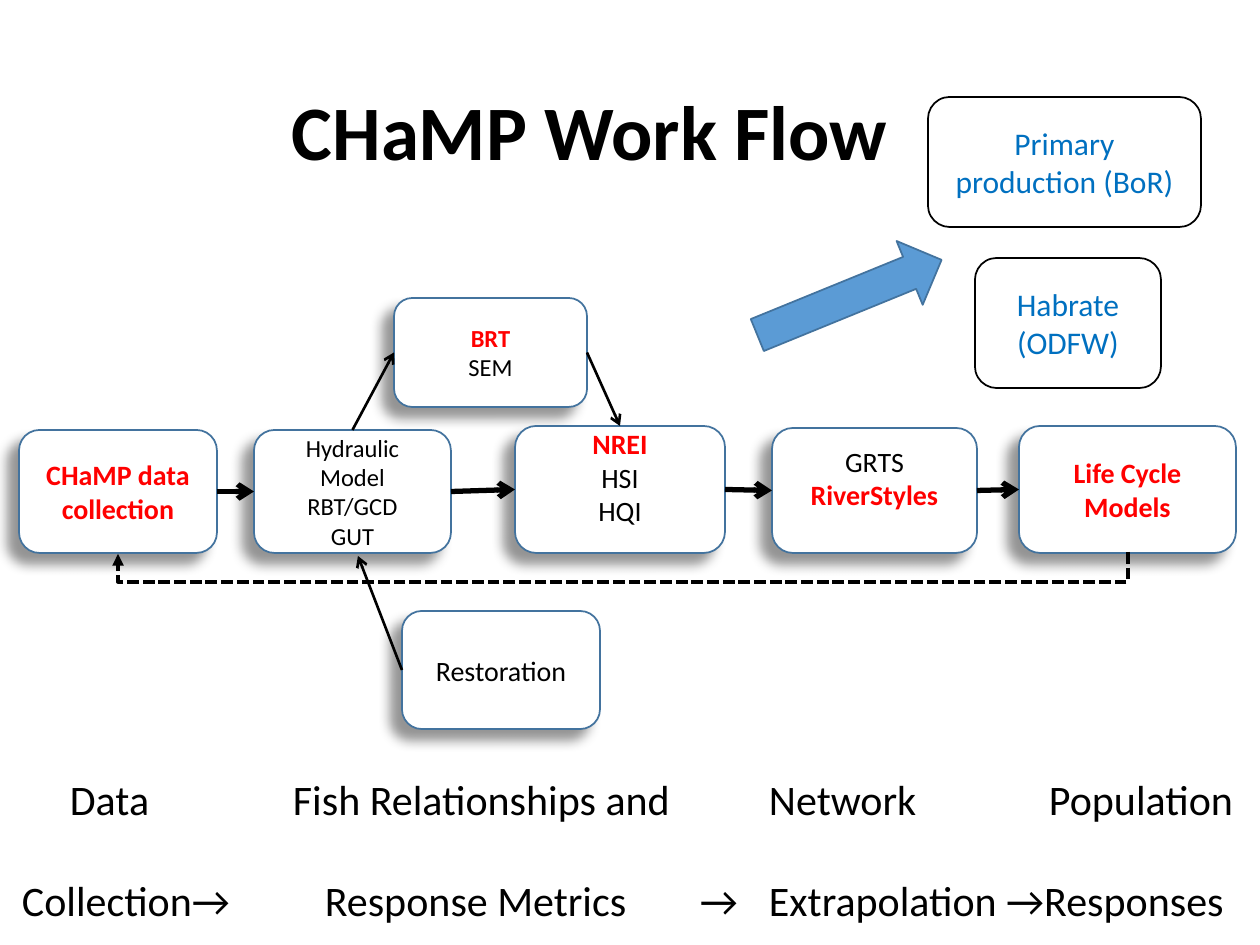
from lxml import etree
from pptx import Presentation
from pptx.dml.color import RGBColor
from pptx.enum.dml import MSO_LINE
from pptx.enum.shapes import MSO_CONNECTOR as CONNECTOR, MSO_SHAPE as SHAPE
from pptx.enum.text import MSO_ANCHOR as ANCHOR, PP_ALIGN as ALIGN
from pptx.oxml import parse_xml
from pptx.oxml.ns import nsdecls, qn
from pptx.util import Pt

PX = 914400 / 126
TOP, LEFT, BOTTOM, RIGHT = 0, 1, 2, 3
BLACK, RED, BLUE, EDGE = "000000", "FF0000", "0070C0", "43739E"


def px(*lengths):
    return [round(length * PX) for length in lengths]


def color(hex_code):
    return RGBColor.from_string(hex_code)


prs = Presentation()
prs.slide_width, prs.slide_height = px(1260, 945)
slide = prs.slides.add_slide(prs.slide_layouts[5])
shapes = slide.shapes

# Title
title = shapes.title
title.left, title.top, title.width, title.height = px(47, 0, 1086, 183)
title.text_frame.text = "CHaMP Work Flow"
title.text_frame.vertical_anchor = ANCHOR.BOTTOM
heading = title.text_frame.paragraphs[0]
heading.alignment = ALIGN.CENTER
heading.line_spacing = 0.9
heading.font.name, heading.font.size, heading.font.bold = "Calibri", Pt(44), True
heading.font.color.rgb = color(BLACK)

# Boxes: place, edge, size, extra bottom inset, lines of (text, colour)
steps = {
    "collection": ((19, 430, 198, 123), EDGE, 16, 0, [("CHaMP data collection", RED)]),
    "brt": ((394, 298, 193, 109), EDGE, 14, 0, [("BRT", RED), ("SEM", BLACK)]),
    "nrei": ((515, 426, 210, 127), EDGE, 16, 25,
             [("NREI", RED), ("HSI", BLACK), ("HQI", BLACK)]),
    "life_cycle": ((1019, 426, 217, 127), EDGE, 16, 0, [("Life Cycle Models", RED)]),
    "hydraulic": ((254, 430, 197, 123), EDGE, 14, 0,
                  [("Hydraulic Model", BLACK), ("RBT/GCD", BLACK), ("GUT", BLACK)]),
    "grts": ((772, 428, 205, 125), EDGE, 16, 25,
             [("GRTS", BLACK), ("RiverStyles", RED)]),
    "primary": ((928, 97, 273, 130), BLACK, 18, 0, [("Primary production (BoR)", BLUE)]),
    "habrate": ((975, 258, 186, 130), BLACK, 18, 0, [("Habrate (ODFW)", BLUE)]),
    "restoration": ((402, 611, 198, 118), EDGE, 16, 0, [("Restoration", BLACK)]),
}
boxes = {}
for step, (place, edge, size, lift, lines) in steps.items():
    box = boxes[step] = shapes.add_shape(SHAPE.ROUNDED_RECTANGLE, *px(*place))
    box.shadow.inherit = False
    box.fill.solid()
    box.fill.fore_color.rgb = color("FFFFFF")
    box.line.color.rgb = color(edge)
    box.line.width = Pt(1)
    if edge == EDGE:
        effects = box._element.spPr.find(qn("a:effectLst"))
        effects.append(parse_xml(
            f'<a:outerShdw {nsdecls("a")} blurRad="{Pt(7)}" dist="{Pt(9)}" dir="8220000"'
            ' algn="tr" rotWithShape="0"><a:srgbClr val="000000"><a:alpha val="42000"/>'
            '</a:srgbClr></a:outerShdw>'))
    frame = box.text_frame
    frame.word_wrap = True
    frame.vertical_anchor = ANCHOR.MIDDLE
    frame.margin_top, frame.margin_bottom = px(6, 6 + lift)
    frame.text = "\n".join(text for text, _ in lines)
    for paragraph, (_, ink) in zip(frame.paragraphs, lines):
        paragraph.alignment = ALIGN.CENTER
        paragraph.font.name, paragraph.font.size = "Calibri", Pt(size)
        paragraph.font.bold = ink == RED
        paragraph.font.color.rgb = color(ink)

# Flow arrows between the boxes
flows = [
    ("collection", RIGHT, "hydraulic", LEFT, 3),
    ("hydraulic", TOP, "brt", LEFT, 1.5),
    ("brt", RIGHT, "nrei", TOP, 1.5),
    ("hydraulic", RIGHT, "nrei", LEFT, 3),
    ("nrei", RIGHT, "grts", LEFT, 3),
    ("grts", RIGHT, "life_cycle", LEFT, 3),
    ("restoration", LEFT, None, None, 1.5),
]
arrows = []
for source, source_side, target, target_side, weight in flows:
    flow = shapes.add_connector(CONNECTOR.STRAIGHT, *px(402, 670, 358, 556))
    flow.begin_connect(boxes[source], source_side)
    if target:
        flow.end_connect(boxes[target], target_side)
    arrows.append((flow, weight, "arrow"))

# Dashed feedback loop: a quarter-turned elbow that dips 30 px below the row
feedback = shapes.add_connector(CONNECTOR.ELBOW, *px(622, 48, 624, 1058))
feedback._element.spPr.find(qn("a:xfrm")).set("rot", "5400000")
adjustments = feedback._element.spPr.find(qn("a:prstGeom")).get_or_add_avLst()
etree.SubElement(adjustments, qn("a:gd"), name="adj1", fmla="val 1500000")
feedback.line.dash_style = MSO_LINE.SQUARE_DOT
arrows.append((feedback, 2.25, "triangle"))

for arrow, weight, head in arrows:
    arrow.line.color.rgb = color(BLACK)
    arrow.line.width = Pt(weight)
    etree.SubElement(arrow.line._get_or_add_ln(), qn("a:tailEnd"), type=head)
    etree.SubElement(arrow._element.spPr, qn("a:effectLst"))

# Block arrow towards the partner products
pointer = shapes.add_shape(SHAPE.RIGHT_ARROW, *px(750, 263, 199, 69))
pointer.rotation = 337.8
pointer.shadow.inherit = False
pointer.fill.solid()
pointer.fill.fore_color.rgb = color("5B9BD5")
pointer.line.color.rgb = color(EDGE)
pointer.line.width = Pt(1)

# Stage captions, set in columns by tab stops
captions = shapes.add_textbox(*px(0, 767, 1260, 165)).text_frame
captions.word_wrap = True
captions.margin_left, captions.margin_right = px(22, 0)
captions.text = ("\tData\tFish Relationships and\tNetwork\tPopulation\n"
                 "Collection→\tResponse Metrics\t→\tExtrapolation →Responses")
column_stops = [(48, 271, 747, 1027), (303, 678, 747)]
for caption, stops in zip(captions.paragraphs, column_stops):
    tabs = etree.SubElement(caption._p.get_or_add_pPr(), qn("a:tabLst"))
    for stop in px(*stops):
        etree.SubElement(tabs, qn("a:tab"), pos=str(stop), algn="l")
    caption.font.name, caption.font.size = "Calibri", Pt(24)
    caption.font.color.rgb = color(BLACK)
captions.paragraphs[1].space_before = Pt(29)

prs.save("out.pptx")
